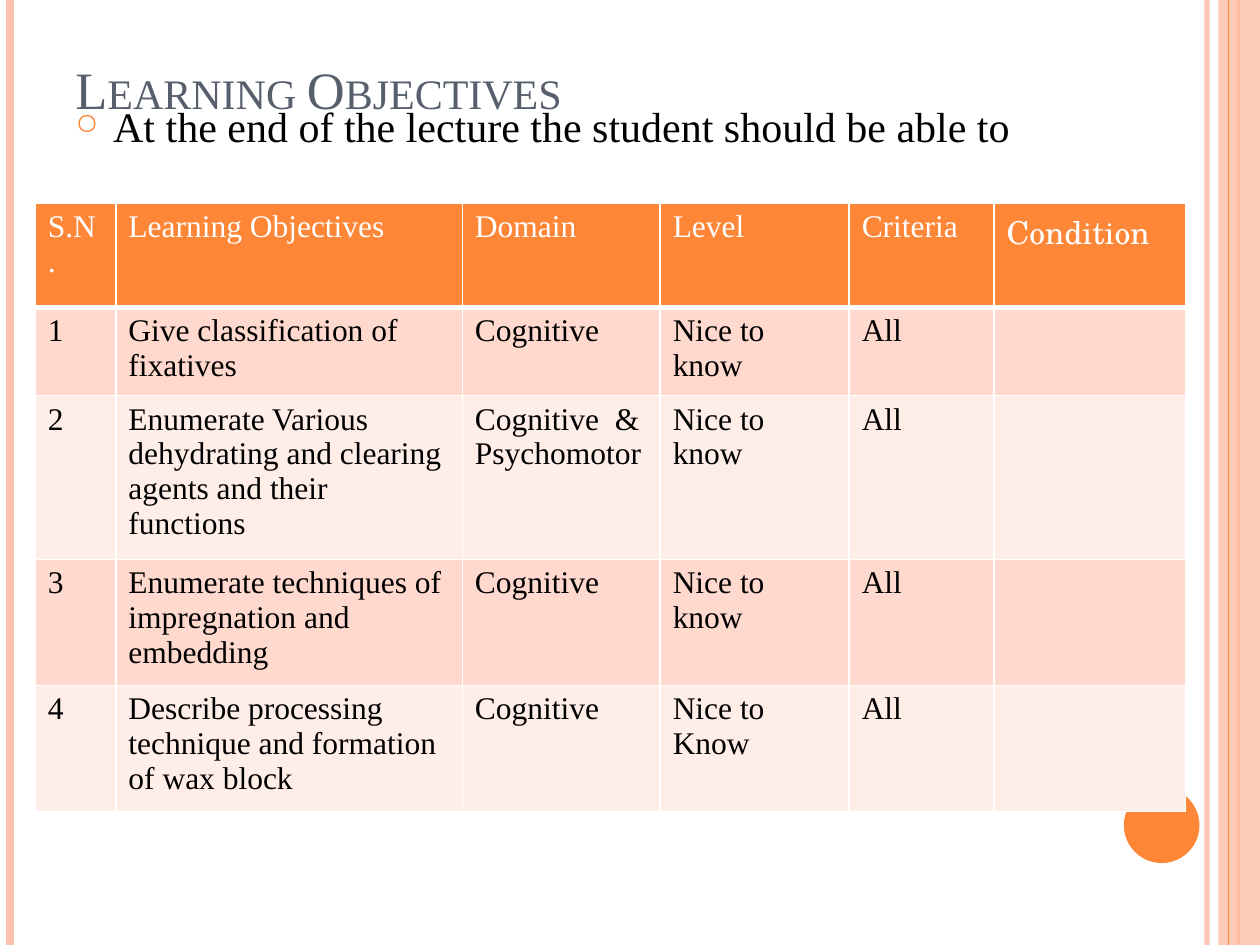
from lxml import etree
from pptx import Presentation, util as u
from pptx.dml import color as c
from pptx.enum import shapes, text
from pptx.oxml import ns

ORANGE, PEACH, WHITE, BLACK = "FE8637", "FEC3AE", "FFFFFF", "000000"
SERIF = "Times New Roman"


def paint(target, shade, alpha=100):
    target.solid()
    target.fore_color.rgb = c.RGBColor.from_string(shade)
    if alpha < 100:
        node = target._xPr.find(".//" + ns.qn("a:srgbClr"))
        etree.SubElement(node, ns.qn("a:alpha"), val=str(alpha * 1000))


def write(paragraph, words, size, shade, font=SERIF):
    run = paragraph.add_run()
    run.text = words
    run.font.size = u.Pt(size)
    run.font.name = font
    paint(run.font.fill, shade)
    return run


presentation = Presentation()
presentation.slide_width = u.Inches(10)
presentation.slide_height = u.Inches(7.5)
slide = presentation.slides.add_slide(presentation.slide_layouts[6])
column = presentation.slide_width / 100
row = presentation.slide_height / 75

decorations = [
    ("stripe", 95.8, PEACH, 3, 93),
    ("stripe", 0.8, PEACH, 4.5, 100),
    ("stripe", 98.3, ORANGE, 1.5, 100),
    ("band", 96.7, PEACH, 0, 87),
    ("stripe", 97.5, ORANGE, 0.75, 100),
]
for kind, left, shade, weight, alpha in decorations:
    x = int(left * column)
    if kind == "stripe":
        stripe = slide.shapes.add_connector(
            shapes.MSO_CONNECTOR.STRAIGHT, x, 0, x, presentation.slide_height)
        stripe.line.width = u.Pt(weight)
        paint(stripe.line.fill, shade, alpha)
        etree.SubElement(stripe._element.spPr, ns.qn("a:effectLst"))
    else:
        band = slide.shapes.add_shape(
            shapes.MSO_SHAPE.RECTANGLE, x, 0,
            presentation.slide_width - x, presentation.slide_height)
        band.shadow.inherit = False
        paint(band.fill, shade, alpha)
        band.line.fill.background()

circle = slide.shapes.add_shape(
    shapes.MSO_SHAPE.OVAL, int(89.2 * column), int(62.5 * row), int(6 * column), int(6 * row))
circle.shadow.inherit = False
paint(circle.fill, ORANGE)
circle.line.fill.background()

title = slide.shapes.add_textbox(
    int(5 * column), int(-2.5 * row), int(90 * column), int(12.5 * row))
title.text_frame.word_wrap = True
title.text_frame.vertical_anchor = text.MSO_ANCHOR.BOTTOM
heading = write(title.text_frame.paragraphs[0], "Learning Objectives", 30, "575F6D")
heading.font._element.set("cap", "small")

body = slide.shapes.add_textbox(
    int(5 * column), int(7.5 * row), int(90 * column), int(49.5 * row))
body.text_frame.word_wrap = True
paragraph = body.text_frame.paragraphs[0]
paragraph.space_before = u.Pt(6)
write(paragraph, "At the end of the lecture the student should be able to", 24, BLACK)
properties = paragraph._p.get_or_add_pPr()
properties.set("marL", str(int(3 * column)))
properties.set("indent", str(int(-3 * column)))
bullet_color = etree.SubElement(properties, ns.qn("a:buClr"))
etree.SubElement(bullet_color, ns.qn("a:srgbClr"), val=ORANGE)
etree.SubElement(properties, ns.qn("a:buSzPct"), val="70000")
etree.SubElement(properties, ns.qn("a:buChar"), char="○")

objectives = [
    ["S.N.", "Learning Objectives", "Domain", "Level", "Criteria", "Condition"],
    ["1", "Give classification of fixatives", "Cognitive", "Nice to know", "All", ""],
    ["2", "Enumerate Various dehydrating and clearing agents and their functions",
     "Cognitive  & Psychomotor", "Nice to know", "All", ""],
    ["3", "Enumerate techniques of impregnation and embedding",
     "Cognitive", "Nice to know", "All", ""],
    ["4", "Describe processing technique and formation of wax block",
     "Cognitive", "Nice to Know", "All", ""],
]
widths = [6.4, 27.5, 15.7, 15, 11.5, 15.2]
frame = slide.shapes.add_table(
    len(objectives), len(widths), int(2.8 * column), int(16.1 * row),
    int(sum(widths) * column), int(48.3 * row))
table = frame.table
for table_column, width in zip(table.columns, widths):
    table_column.width = int(width * column)

for row_index, values in enumerate(objectives):
    header = row_index == 0
    table.rows[row_index].height = int((8.3 if header else 5.8) * row)
    shade = ORANGE if header else ("FFEDE8", "FFD9CE")[row_index % 2]
    for column_index, words in enumerate(values):
        cell = table.cell(row_index, column_index)
        cell_properties = cell._tc.get_or_add_tcPr()
        for side in ("lnL", "lnR", "lnT", "lnB"):
            thick = (header and side == "lnB") or (row_index == 1 and side == "lnT")
            border = etree.SubElement(
                cell_properties, ns.qn("a:" + side), w=str(u.Pt(3 if thick else 1)))
            fill = etree.SubElement(border, ns.qn("a:solidFill"))
            etree.SubElement(fill, ns.qn("a:srgbClr"), val=WHITE)
        paint(cell.fill, shade)
        if words:
            font = "TeX Gyre Schola" if words == "Condition" else SERIF
            write(cell.text_frame.paragraphs[0], words, 18, WHITE if header else BLACK, font)
frame.height = int(48.3 * row)

presentation.save("out.pptx")
